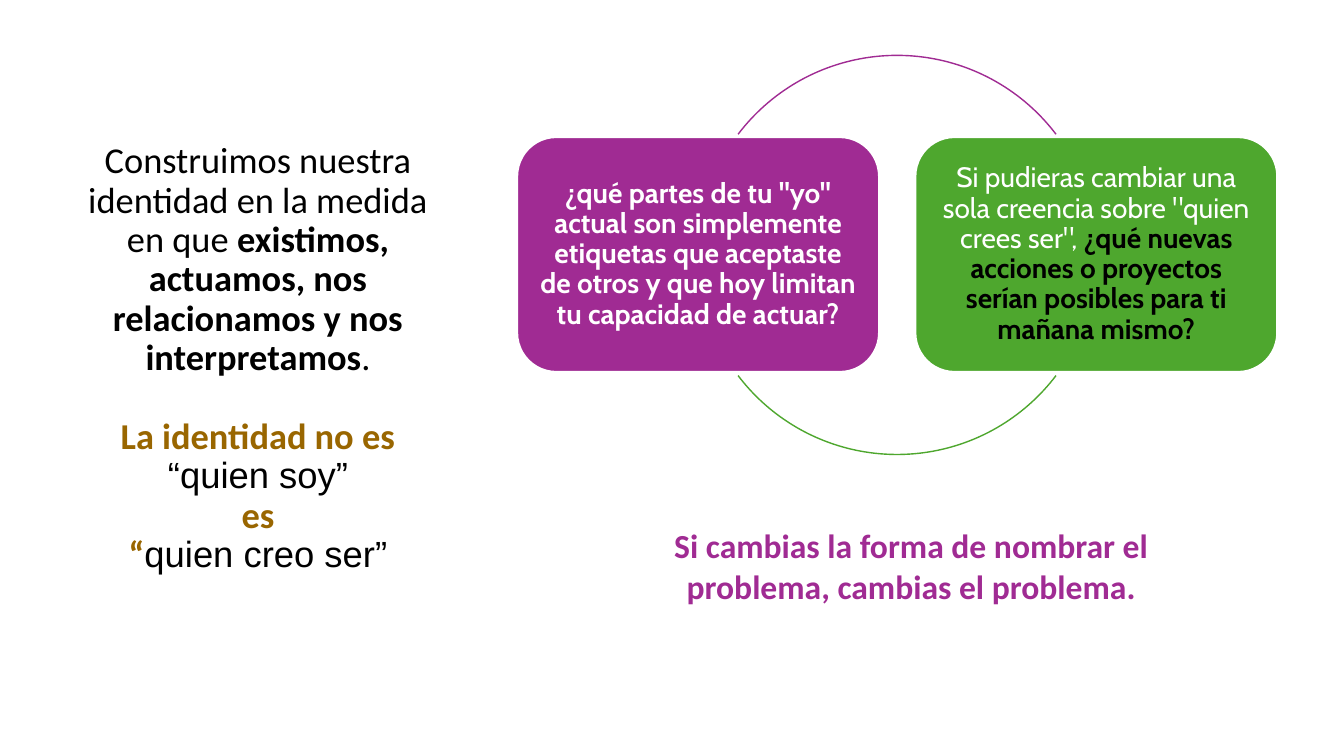
from dataclasses import dataclass

from pptx import Presentation
from pptx.dml.color import RGBColor
from pptx.enum.shapes import MSO_SHAPE
from pptx.enum.text import MSO_ANCHOR, PP_ALIGN
from pptx.shapes.autoshape import Shape
from pptx.slide import Slide
from pptx.util import Inches, Pt

ROUNDED, ARC = MSO_SHAPE.ROUNDED_RECTANGLE, MSO_SHAPE.ARC
MIDDLE, TOP = MSO_ANCHOR.MIDDLE, MSO_ANCHOR.TOP
CENTER = PP_ALIGN.CENTER

SLIDE_W, SLIDE_H = Inches(13.333), Inches(7.5)
COLORS = {
    "white": "FFFFFF",
    "black": "000000",
    "ochre": "996600",
    "purple": "A02B93",
    "green": "4EA72E",
}
FULL_TURN, ARC_RISE = 360, 37.2
DEGREE = 0.6  # one degree in the units of the arc's adjustments


@dataclass(frozen=True)
class Area:
    """A rectangle in hundredths of the slide's width and height."""
    left: float
    top: float
    width: float
    height: float

    def emu(self) -> tuple[int, int, int, int]:
        return (int(SLIDE_W * self.left / 100), int(SLIDE_H * self.top / 100),
                int(SLIDE_W * self.width / 100), int(SLIDE_H * self.height / 100))


@dataclass(frozen=True)
class Phrase:
    text: str
    color: str
    bold: bool = False
    font: str = "Calibri"


@dataclass(frozen=True)
class Verse:
    """A paragraph and the points of space above it."""
    phrases: tuple[Phrase, ...]
    space_before: float = 0


@dataclass(frozen=True)
class Question:
    color: str
    arc_start: float
    verse: Verse


IDENTITY_AREA = Area(5.18, 9.33, 28.05, 76.27)
CLOSING_AREA = Area(45.45, 68.8, 44.7, 12.13)
ARC_AREA = Area(51.9, 7.33, 29.7, 52.8)
CARD_LEFT, CARD_STEP = 38.48, 29.63
CARD_TOP, CARD_W, CARD_H = 18.13, 26.93, 31.07

IDENTITY = (
    Verse((
        Phrase("Construimos nuestra identidad en la medida en que ", "black"),
        Phrase("existimos, actuamos, nos relacionamos y nos interpretamos", "black", True),
        Phrase(".", "black"),
    )),
    Verse((
        Phrase("La identidad no es ", "ochre", True),
        Phrase("“quien soy”", "black", font="Arial"),
    ), space_before=28.5),
    Verse((Phrase("es", "ochre", True),)),
    Verse((
        Phrase("“", "ochre", True),
        Phrase("quien creo ser”", "black", font="Arial"),
    )),
)
QUESTIONS = (
    Question("purple", 180 + ARC_RISE, Verse((
        Phrase('¿qué partes de tu "yo" actual son simplemente etiquetas que aceptaste '
               "de otros y que hoy limitan tu capacidad de actuar?", "white", True, "Cabin"),
    ))),
    Question("green", ARC_RISE, Verse((
        Phrase('Si pudieras cambiar una sola creencia sobre "quien crees ser", ',
               "white", font="Cabin"),
        Phrase("¿qué nuevas acciones o proyectos serían posibles para ti mañana mismo?",
               "black", True, "Cabin"),
    ))),
)
CLOSING = (
    Verse((Phrase("Si cambias la forma de nombrar el problema, cambias el problema.",
                  "purple", True),)),
)


def rgb(color: str) -> RGBColor:
    return RGBColor.from_string(COLORS[color])


def write(holder: Shape, verses: tuple[Verse, ...], size: float,
          spacing: float, anchor: MSO_ANCHOR) -> None:
    frame = holder.text_frame
    frame.word_wrap = True
    frame.vertical_anchor = anchor
    for index, verse in enumerate(verses):
        paragraph = frame.add_paragraph() if index else frame.paragraphs[0]
        layout = {"alignment": CENTER, "line_spacing": spacing,
                  "space_before": Pt(verse.space_before)}
        for name, value in layout.items():
            setattr(paragraph, name, value)
        for phrase in verse.phrases:
            run = paragraph.add_run()
            run.text = phrase.text
            run.font.color.rgb = rgb(phrase.color)
            for name, value in {"name": phrase.font, "size": Pt(size),
                                "bold": phrase.bold}.items():
                setattr(run.font, name, value)


def outline(shape: Shape, color: str, width: float) -> None:
    shape.shadow.inherit = False
    shape.line.color.rgb = rgb(color)
    shape.line.width = Pt(width)


def draw_card(slide: Slide, question: Question, column: int) -> None:
    area = Area(CARD_LEFT + column * CARD_STEP, CARD_TOP, CARD_W, CARD_H)
    card = slide.shapes.add_shape(ROUNDED, *area.emu())
    card.fill.solid()
    card.fill.fore_color.rgb = rgb(question.color)
    outline(card, "white", 1.5)
    for side in ("left", "top", "right", "bottom"):
        setattr(card.text_frame, f"margin_{side}", Inches(0.08))
    write(card, (question.verse,), 20, 0.9, MIDDLE)


def draw_arc(slide: Slide, question: Question) -> None:
    arc = slide.shapes.add_shape(ARC, *ARC_AREA.emu())
    sweep = FULL_TURN / 2 - 2 * ARC_RISE
    arc.adjustments[0] = question.arc_start * DEGREE
    arc.adjustments[1] = (question.arc_start + sweep) * DEGREE
    arc.fill.background()
    outline(arc, question.color, 1)


def main() -> None:
    deck = Presentation()
    deck.slide_width, deck.slide_height = SLIDE_W, SLIDE_H
    slide = deck.slides.add_slide(deck.slide_layouts[6])

    identity = slide.shapes.add_textbox(*IDENTITY_AREA.emu())
    write(identity, IDENTITY, 26, 0.9, MIDDLE)
    for column, question in enumerate(QUESTIONS):
        draw_card(slide, question, column)
        draw_arc(slide, question)
    closing = slide.shapes.add_textbox(*CLOSING_AREA.emu())
    write(closing, CLOSING, 24, 1.0, TOP)

    deck.save("out.pptx")


if __name__ == "__main__":
    main()
